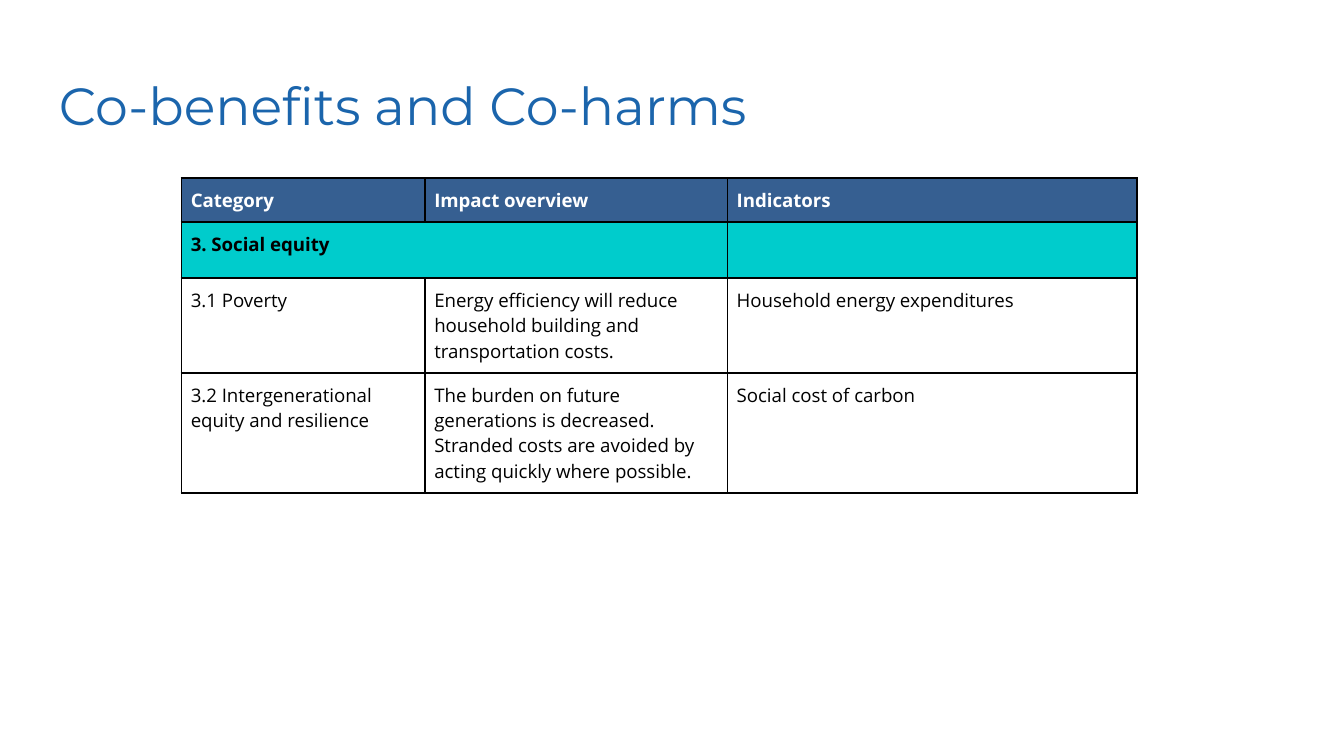
from lxml import etree
from pptx import Presentation
from pptx.dml.color import RGBColor
from pptx.enum.text import MSO_ANCHOR
from pptx.oxml.ns import qn
from pptx.util import Pt

TOP = MSO_ANCHOR.TOP
BLANK_LAYOUT = 6

TITLE_BLUE = "1B65AC"
HEADER_BLUE = "365F91"
SECTION_TEAL = "00CCCC"
WHITE = "FFFFFF"
BLACK = "000000"

COLUMN_WIDTHS = [130.5, 162, 219.5]
ROW_HEIGHTS = [23.6, 30, 50.8, 64.4]
ROWS = [
    ["Category", "Impact overview", "Indicators"],
    ["3. Social equity", "", ""],
    ["3.1 Poverty",
     "Energy efficiency will reduce household building and transportation costs.",
     "Household energy expenditures"],
    ["3.2 Intergenerational equity and resilience",
     "The burden on future generations is decreased. "
     "Stranded costs are avoided by acting quickly where possible.",
     "Social cost of carbon"],
]
# Fill, text colour and weight of each row
ROW_STYLES = [
    (HEADER_BLUE, WHITE, True),
    (SECTION_TEAL, BLACK, True),
    (None, BLACK, False),
    (None, BLACK, False),
]


def rgb(color):
    return RGBColor.from_string(color)


def write(frame, text, *, font, size, color, bold=False, margin=0):
    frame.word_wrap = True
    frame.margin_left = frame.margin_right = Pt(margin)
    frame.margin_top = frame.margin_bottom = Pt(margin)
    run = frame.paragraphs[0].add_run()
    run.text = text
    run.font.name = font
    run.font.size = Pt(size)
    run.font.bold = bold
    run.font.color.rgb = rgb(color)


def fill_cell(cell, color):
    if color:
        cell.fill.solid()
        cell.fill.fore_color.rgb = rgb(color)
    else:
        cell.fill.background()


def border_cell(cell, color, width):
    """Draw all four sides; the lines must precede the fill in tcPr."""
    properties = cell._tc.get_or_add_tcPr()
    for position, side in enumerate(("a:lnL", "a:lnR", "a:lnT", "a:lnB")):
        line = etree.Element(qn(side), w=str(Pt(width)))
        solid = etree.SubElement(line, qn("a:solidFill"))
        etree.SubElement(solid, qn("a:srgbClr"), val=color)
        properties.insert(position, line)


def add_title(slide, text):
    title = slide.shapes.add_textbox(Pt(24.5), Pt(32), Pt(658), Pt(45.4))
    title.text_frame.vertical_anchor = TOP
    write(title.text_frame, text, font="Montserrat", size=28,
          color=TITLE_BLUE, margin=7.2)


def add_impact_table(slide):
    table = slide.shapes.add_table(
        len(ROWS), len(COLUMN_WIDTHS), Pt(97.2), Pt(95.4),
        Pt(sum(COLUMN_WIDTHS)), Pt(sum(ROW_HEIGHTS))).table
    for column, width in zip(table.columns, COLUMN_WIDTHS):
        column.width = Pt(width)
    for row, height, texts, style in zip(table.rows, ROW_HEIGHTS, ROWS, ROW_STYLES):
        row.height = Pt(height)
        fill, color, bold = style
        for cell, text in zip(row.cells, texts):
            fill_cell(cell, fill)
            border_cell(cell, BLACK, 1)
            if text:
                cell.vertical_anchor = TOP
                cell.margin_left = cell.margin_right = Pt(5)
                cell.margin_top = cell.margin_bottom = Pt(5)
                write(cell.text_frame, text, font="Open Sans", size=10,
                      color=color, bold=bold, margin=5)
    table.cell(1, 0).merge(table.cell(1, 1))


def main():
    deck = Presentation()
    deck.slide_width, deck.slide_height = Pt(720), Pt(405)
    slide = deck.slides.add_slide(deck.slide_layouts[BLANK_LAYOUT])
    add_title(slide, "Co-benefits and Co-harms")
    add_impact_table(slide)
    deck.save("out.pptx")


if __name__ == "__main__":
    main()
